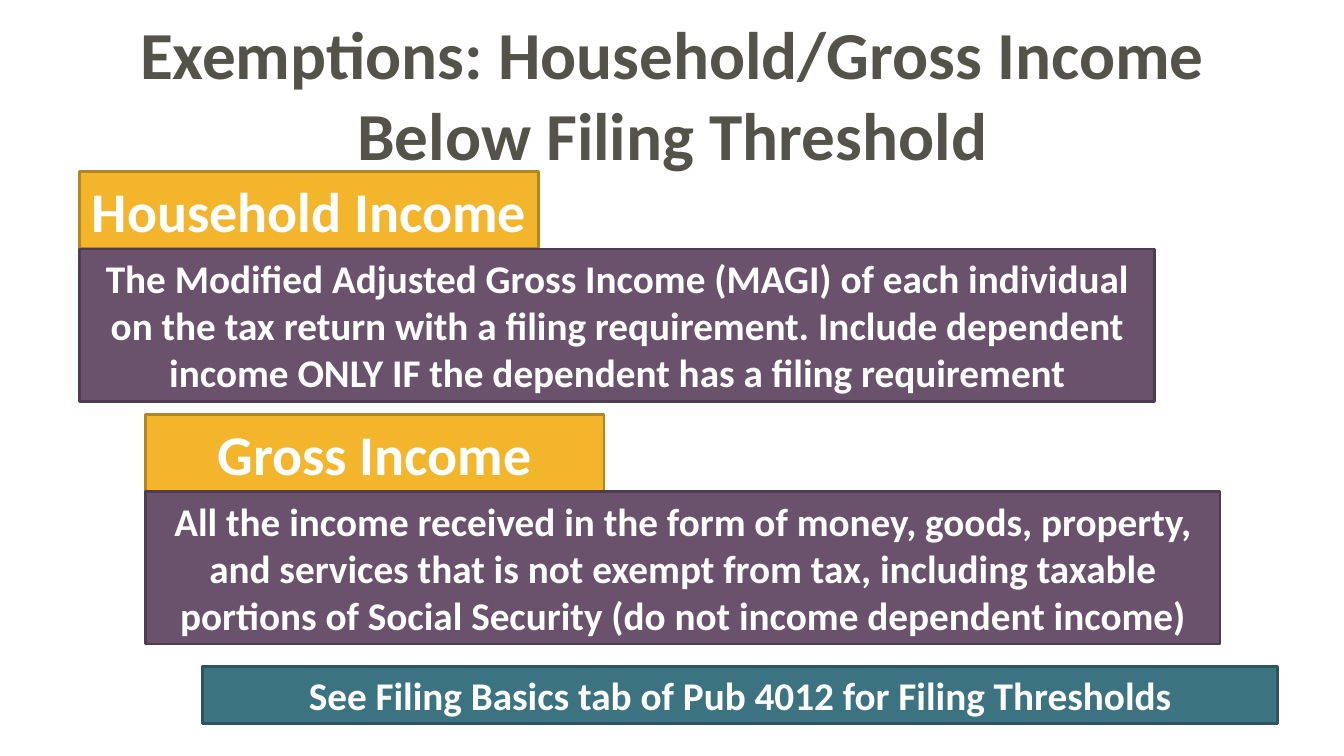
import pptx
import pptx.util
import pptx.dml.color
import pptx.enum.shapes
import pptx.enum.text

RGB = pptx.dml.color.RGBColor
WHITE = RGB(0xFF, 0xFF, 0xFF)
GREY = RGB(0x54, 0x53, 0x4A)
GOLD = RGB(0xF2, 0xB5, 0x2C)
OCHRE = RGB(0xB3, 0x86, 0x21)
PLUM = RGB(0x6A, 0x52, 0x6D)
DARK_PLUM = RGB(0x4E, 0x3D, 0x51)
TEAL = RGB(0x3C, 0x73, 0x81)
DARK_TEAL = RGB(0x2C, 0x55, 0x5F)

SCALE = 9144  # EMU in one px, 100 px to the inch
HEAD_W, HEAD_H = 455, 77
BODY_W, BODY_H = 1066, 151

TERMS = [
    (79, 170, "Household Income",
     "The Modified Adjusted Gross Income (MAGI) of each individual on the tax "
     "return with a filing requirement. Include dependent income ONLY IF the "
     "dependent has a filing requirement"),
    (144, 411, "Gross Income",
     "All the income received in the form of money, goods, property, and "
     "services that is not exempt from tax, including taxable portions of "
     "Social Security (do not income dependent income)"),
]


class Page:
    """Holds the text style and the slide being filled."""

    font = {"name": "Calibri", "bold": True}
    frame = {"word_wrap": True,
             "vertical_anchor": pptx.enum.text.MSO_ANCHOR.MIDDLE}

    def __init__(self, slide):
        self.slide = slide

    def label(self, shape, text, size, color):
        frame = shape.text_frame
        for key, value in self.frame.items():
            setattr(frame, key, value)
        para = frame.paragraphs[0]
        para.alignment = pptx.enum.text.PP_ALIGN.CENTER
        run = para.add_run()
        run.text = text
        style = {**self.font, "size": pptx.util.Pt(size)}
        for key, value in style.items():
            setattr(run.font, key, value)
        run.font.color.rgb = color

    def title(self, box, text):
        shape = self.slide.shapes.add_textbox(*[n * SCALE for n in box])
        self.label(shape, text, 48, GREY)

    def panel(self, box, text, size, fill, line):
        shape = self.slide.shapes.add_shape(
            pptx.enum.shapes.MSO_SHAPE.RECTANGLE, *[n * SCALE for n in box])
        shape.shadow.inherit = False
        shape.fill.solid()
        shape.fill.fore_color.rgb = fill
        shape.line.color.rgb = line
        shape.line.width = pptx.util.Pt(2)
        self.label(shape, text, size, WHITE)

    def term(self, left, top, name, meaning):
        """Stacks a gold heading on the plum box that defines it."""
        self.panel((left, top, HEAD_W, HEAD_H), name, 40, GOLD, OCHRE)
        self.panel((left, top + HEAD_H, BODY_W, BODY_H), meaning, 28,
                   PLUM, DARK_PLUM)


def main():
    deck = pptx.Presentation()
    deck.slide_width = 1333 * SCALE
    deck.slide_height = 750 * SCALE
    page = Page(deck.slides.add_slide(deck.slide_layouts[6]))
    page.title((67, 30, 1200, 125),
               "Exemptions: Household/Gross Income Below Filing Threshold")
    for term in TERMS:
        page.term(*term)
    page.panel((201, 661, BODY_W, 57),
               "See Filing Basics tab of Pub 4012 for Filing Thresholds",
               28, TEAL, DARK_TEAL)
    deck.save("out.pptx")


if __name__ == "__main__":
    main()
